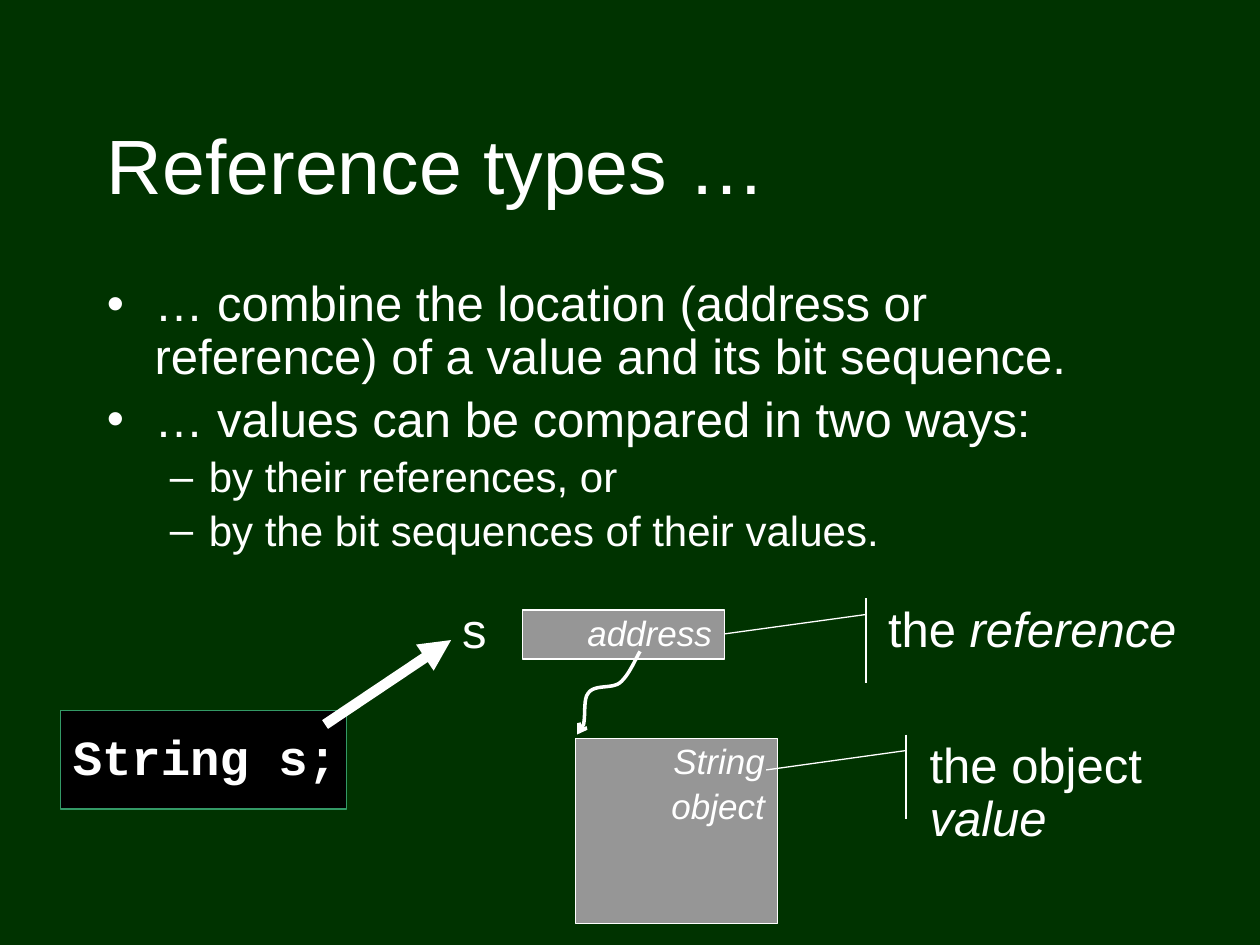
from lxml.etree import SubElement
from pptx import Presentation
from pptx.dml.color import RGBColor
from pptx.enum.shapes import MSO_CONNECTOR, MSO_SHAPE
from pptx.enum.text import MSO_ANCHOR, PP_ALIGN
from pptx.oxml.ns import qn
from pptx.util import Inches, Pt

COLORS = {
    "background": "003300",
    "text": "FFFFFF",
    "memory": "969696",
    "code": "000000",
    "code_border": "339966",
}


def color(name):
    return RGBColor.from_string(COLORS[name])


def write(paragraph, text, size=28, font="Arial", bold=False, italic=False):
    run = paragraph.add_run()
    run.text = text
    run.font.size = Pt(size)
    run.font.name = font
    run.font.bold = bold
    run.font.italic = italic
    run.font.color.rgb = color("text")


def space(paragraph):
    """Tighten the lines and put 20 % of a line before the paragraph."""
    paragraph.line_spacing = 0.9
    paragraph.space_before = Pt(0)
    before = paragraph._p.pPr.find(qn("a:spcBef"))
    before.remove(before[0])
    SubElement(before, qn("a:spcPct"), val="20000")


def add_bullet(paragraph, symbol, margin, hang):
    properties = paragraph._p.get_or_add_pPr()
    properties.set("marL", str(Inches(margin)))
    properties.set("indent", str(-Inches(hang)))
    SubElement(properties, qn("a:buFont"), typeface="Arial")
    SubElement(properties, qn("a:buChar"), char=symbol)


def add_arrowhead(line, kind):
    SubElement(line._get_or_add_ln(), qn("a:tailEnd"), type=kind)


def curve_points(start, segments, steps=12):
    """Return points along a chain of cubic Bezier segments."""
    points = [start]
    for first, second, end in segments:
        for step in range(1, steps + 1):
            t = step / steps
            weights = ((1 - t) ** 3, 3 * t * (1 - t) ** 2, 3 * t * t * (1 - t), t ** 3)
            controls = (start, first, second, end)
            points.append(tuple(
                sum(w * c[axis] for w, c in zip(weights, controls)) for axis in (0, 1)))
        start = end
    return [(Inches(x), Inches(y)) for x, y in points]


class Diagram:
    """Holds the slide and draws its elements in one style."""

    def __init__(self, slide):
        self.slide = slide
        self.shapes = slide.shapes
        slide.background.fill.solid()
        slide.background.fill.fore_color.rgb = color("background")

    def outline(self, shape, border="text", width=0.75):
        shape.shadow.inherit = False
        shape.line.color.rgb = color(border)
        shape.line.width = Pt(width)

    def text(self, box, paragraphs, anchor=MSO_ANCHOR.TOP, wrap=True):
        """Add a text box; a paragraph is (text, size, bullet arguments or None)."""
        frame = self.shapes.add_textbox(*map(Inches, box)).text_frame
        frame.word_wrap = wrap
        frame.vertical_anchor = anchor
        for index, (content, size, bullet) in enumerate(paragraphs):
            paragraph = frame.add_paragraph() if index else frame.paragraphs[0]
            if len(paragraphs) > 1 or not wrap:
                space(paragraph)
            if bullet:
                add_bullet(paragraph, *bullet)
            write(paragraph, content, size)

    def box(self, box, lines, fill="memory", border="text", anchor=MSO_ANCHOR.TOP,
            align=PP_ALIGN.RIGHT, **style):
        shape = self.shapes.add_shape(MSO_SHAPE.RECTANGLE, *map(Inches, box))
        self.outline(shape, border)
        shape.fill.solid()
        shape.fill.fore_color.rgb = color(fill)
        frame = shape.text_frame
        frame.word_wrap = False
        frame.vertical_anchor = anchor
        for index, content in enumerate(lines):
            paragraph = frame.add_paragraph() if index else frame.paragraphs[0]
            paragraph.alignment = align
            space(paragraph)
            write(paragraph, content, **style)

    def callout(self, box, plain, stressed, adjustments):
        shape = self.shapes.add_shape(
            MSO_SHAPE.LINE_CALLOUT_1_ACCENT_BAR, *map(Inches, box))
        for index, value in enumerate(adjustments):
            shape.adjustments[index] = value
        self.outline(shape)
        shape.fill.background()
        shape.text_frame.word_wrap = True
        shape.text_frame.vertical_anchor = MSO_ANCHOR.TOP
        paragraph = shape.text_frame.paragraphs[0]
        paragraph.alignment = PP_ALIGN.LEFT
        space(paragraph)
        write(paragraph, plain)
        write(paragraph, stressed, italic=True)

    def arrow(self, start, end, width):
        connector = self.shapes.add_connector(
            MSO_CONNECTOR.STRAIGHT, *map(Inches, start + end))
        connector.line.color.rgb = color("text")
        connector.line.width = Pt(width)
        add_arrowhead(connector.line, "triangle")
        SubElement(connector._element.spPr, qn("a:effectLst"))

    def curved_arrow(self, start, segments, width):
        points = curve_points(start, segments)
        builder = self.shapes.build_freeform(*points[0])
        builder.add_line_segments(points[1:], close=False)
        shape = builder.convert_to_shape()
        shape.fill.background()
        self.outline(shape, width=width)
        add_arrowhead(shape.line, "arrow")


def main():
    presentation = Presentation()
    presentation.slide_width = Inches(10)
    presentation.slide_height = Inches(7.5)
    diagram = Diagram(presentation.slides.add_slide(presentation.slide_layouts[6]))

    diagram.text((0.75, 0.67, 8.5, 1.25), [("Reference types …", 44, None)],
                 anchor=MSO_ANCHOR.MIDDLE)
    point, subpoint = ("•", 0.38, 0.38), ("–", 0.81, 0.31)
    diagram.text((0.75, 2.17, 8.5, 2.33), [
        ("… combine the location (address or reference) of a value"
         " and its bit sequence.", 28, point),
        ("… values can be compared in two ways:", 28, point),
        ("by their references, or", 24, subpoint),
        ("by the bit sequences of their values.", 24, subpoint),
    ])

    diagram.box((0.48, 5.64, 2.27, 0.78), ["String s;"], fill="code",
                border="code_border", anchor=MSO_ANCHOR.MIDDLE, align=PP_ALIGN.LEFT,
                font="Courier New", bold=True)
    diagram.text((3.57, 4.76, 0.4, 0.52), [("s", 28, None)], wrap=False)
    diagram.box((4.15, 4.84, 1.6, 0.39), ["address"], size=20, italic=True)
    diagram.arrow((2.58, 5.75), (3.58, 5.08), width=6)
    diagram.callout((6.95, 4.75, 2.55, 0.67), "the ", "reference",
                    (0.19, -0.03, 0.42, -0.47))
    diagram.box((4.57, 5.86, 1.6, 1.47), ["String", "object"], size=20, italic=True)
    diagram.callout((7.28, 5.83, 2.22, 0.67), "the object ", "value",
                    (0.19, -0.04, 0.42, -0.54))
    diagram.curved_arrow((5.08, 5.17), [
        ((5.03, 5.26), (4.99, 5.36), (4.92, 5.42)),
        ((4.85, 5.47), (4.72, 5.43), (4.67, 5.5)),
        ((4.61, 5.57), (4.68, 5.78), (4.58, 5.83)),
    ], width=2)

    presentation.save("out.pptx")


if __name__ == "__main__":
    main()
